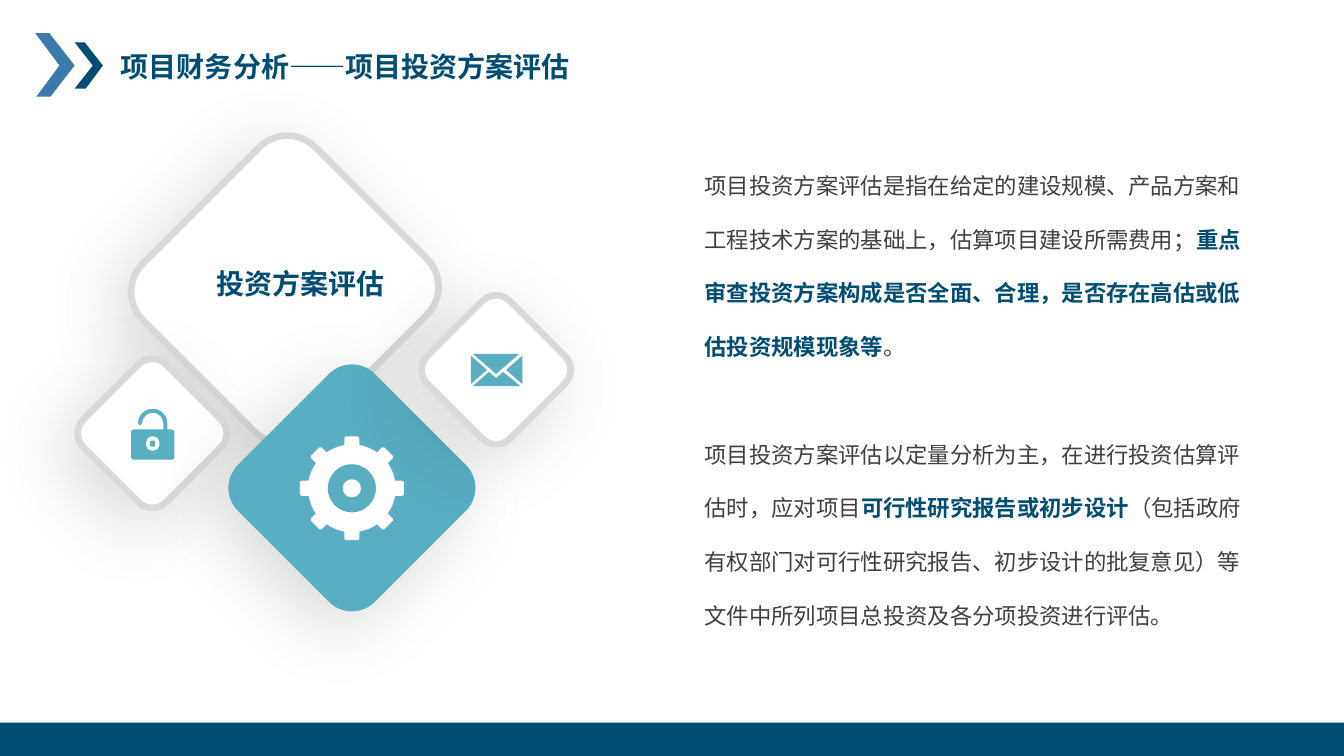
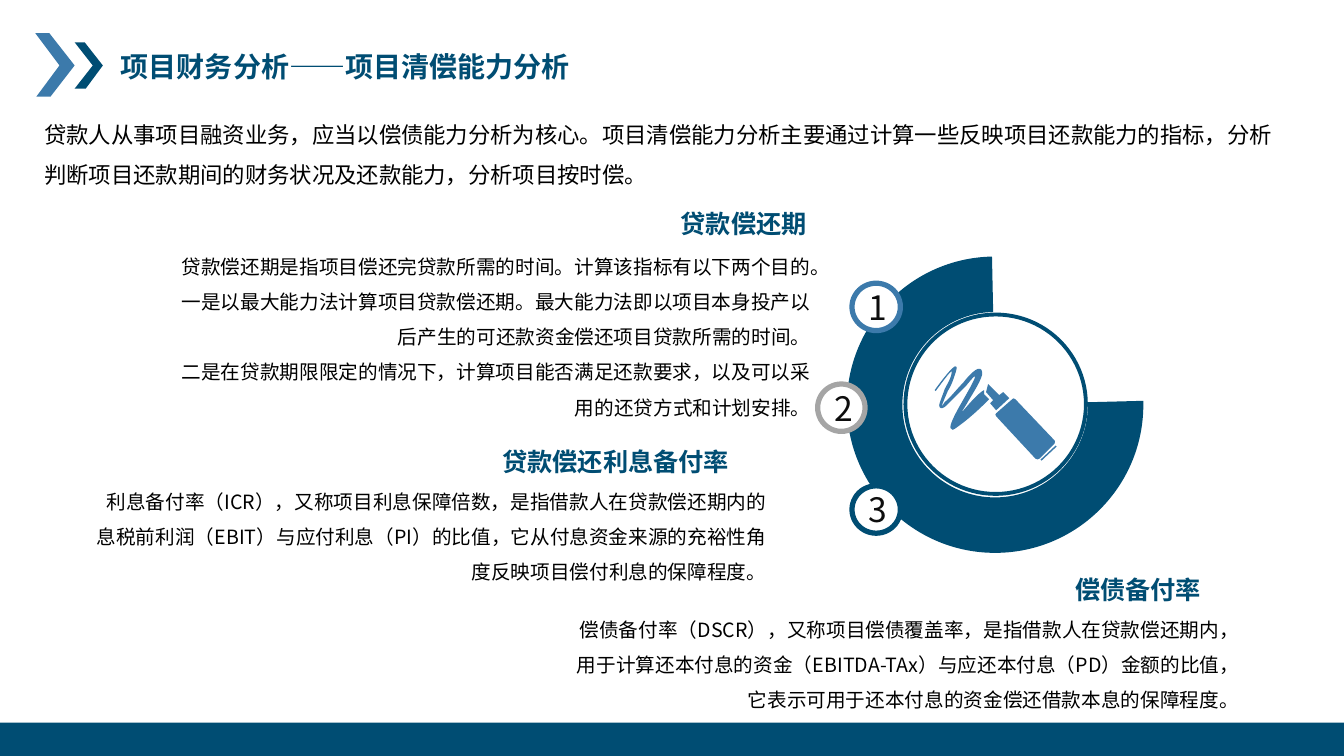
"""Build two slides on project financial analysis."""
import math

from lxml import etree
from pptx import Presentation
from pptx import util as u
from pptx.dml.color import RGBColor
from pptx.enum import shapes, text
from pptx.oxml.ns import qn

PX = 9144
FONT = "Noto Sans CJK SC"
NAVY, BLUE, TEAL = "004D73", "3C7AAB", "59AEC1"
WHITE, BLACK, INK, BODY = "FFFFFF", "000000", "0D0D0D", "404040"
BORDER, GREY = "D9D9D9", "A5A5A5"
LEFT, CENTER, RIGHT = text.PP_ALIGN.LEFT, text.PP_ALIGN.CENTER, text.PP_ALIGN.RIGHT

CHEVRONS = [
    ([(35, 33), (49, 33), (74, 65), (50, 96), (36, 96), (59, 65)], BLUE),
    ([(74, 42), (84, 42), (102, 65), (85, 88), (74, 88), (92, 65)], NAVY),
]
BAND = (0, 717, 1333, 33)
TITLE_BOX = (110, 44, 579, 44)

PLAN_TITLE = "项目财务分析——项目投资方案评估"
PLAN_BOX = (689, 139, 563, 487)
PLAN_TEXT = [
    [("项目投资方案评估是指在给定的建设规模、产品方案和工程技术方案的基础上，估算项目建设所需费用；", False),
     ("重点审查投资方案构成是否全面、合理，是否存在高估或低估投资规模现象等", True),
     ("。", False)],
    [("项目投资方案评估以定量分析为主，在进行投资估算评估时，应对项目", False),
     ("可行性研究报告或初步设计", True),
     ("（包括政府有权部门对可行性研究报告、初步设计的批复意见）等文件中所列项目总投资及各分项投资进行评估。", False)],
]
DIAMONDS = [
    ((165, 166, 235, 242), WHITE, BORDER),
    ((93, 372, 116, 116), WHITE, BORDER),
    ((253, 388, 192, 192), TEAL, None),
    ((434, 309, 116, 116), WHITE, BORDER),
]
DIAMOND_LABEL = ("投资方案评估", (187, 259, 223, 44))
ENVELOPE = [
    [(485, 369), (492, 375), (499, 369), (516, 383), (469, 383)],
    [(518, 353), (518, 381), (502, 367)],
    [(467, 353), (483, 367), (467, 381)],
    [(469, 351), (515, 351), (492, 371)],
]

DEBT_TITLE = "项目财务分析——项目清偿能力分析"
DEBT_INTRO = ("贷款人从事项目融资业务，应当以偿债能力分析为核心。项目清偿能力分析主要通过计算一些反映项目还款能力的指标，"
              "分析判断项目还款期间的财务状况及还款能力，分析项目按时偿。")
INTRO_BOX = (34, 102, 1255, 86)
INDICATORS = [
    ("贷款偿还期", (418, 202, 392, 38), (164, 236, 650, 190), [
        "贷款偿还期是指项目偿还完贷款所需的时间。计算该指标有以下两个目的。",
        "一是以最大能力法计算项目贷款偿还期。最大能力法即以项目本身投产以后产生的可还款资金偿还项目贷款所需的时间。",
        "二是在贷款期限限定的情况下，计算项目能否满足还款要求，以及可以采用的还贷方式和计划安排。"]),
    ("贷款偿还利息备付率", (341, 438, 392, 38), (82, 469, 688, 116), [
        "利息备付率（ICR），又称项目利息保障倍数，是指借款人在贷款偿还期内的息税前利润（EBIT）与应付利息（PI）的比值，"
        "它从付息资金来源的充裕性角度反映项目偿付利息的保障程度。"]),
    ("偿债备付率", (809, 565, 392, 38), (551, 596, 688, 116), [
        "偿债备付率（DSCR），又称项目偿债覆盖率，是指借款人在贷款偿还期内，用于计算还本付息的资金（EBITDA-TAx）"
        "与应还本付息（PD）金额的比值，它表示可用于还本付息的资金偿还借款本息的保障程度。"]),
]
BADGES = [((845, 281, 48, 47), BLUE), ((811, 381, 47, 47), GREY), ((845, 482, 48, 47), NAVY)]
HUB = (898, 312, 179, 178)
SCRIBBLE = [
    (927, 387), (927, 387, 954, 349, 948, 369), (946, 375, 944, 382, 940, 388),
    (937, 395, 934, 402, 934, 403), (934, 403, 935, 402, 937, 399),
    (943, 394, 949, 386, 955, 380), (969, 362, 975, 363, 974, 372),
    (972, 380, 963, 393, 958, 402), (945, 422, 966, 392, 976, 387),
    (976, 391), (981, 396), (981, 396, 966, 412, 949, 424),
    (945, 427, 944, 427, 943, 425), (941, 423, 947, 411, 954, 399),
    (962, 385, 977, 359, 958, 383), (952, 389, 945, 396, 939, 402),
    (936, 405, 933, 406, 932, 404), (930, 403, 934, 395, 937, 386),
    (940, 380, 944, 374, 944, 369), (946, 363, 928, 388, 928, 388),
]
MARKER = [
    [(988, 410), (1004, 396), (1004, 396, 1006, 394, 1007, 396), (1046, 437), (1046, 437, 1047, 438, 1046, 440),
     (1031, 455), (1030, 456, 1028, 456, 1027, 455), (988, 413), (987, 412, 987, 410, 988, 410)],
    [(980, 381), (978, 389), (985, 397), (982, 400), (988, 407), (1001, 395), (995, 389), (991, 392)],
    [(1032, 456), (1033, 457), (1048, 443), (1047, 442)],
]


def rgb(value):
    return RGBColor.from_string(value)


def px(*values):
    return [round(v * PX) for v in values]


def arc(cx, cy, radius, start, end):
    """Return a start point and cubic curves of at most a quarter turn each."""
    count = math.ceil(abs(end - start) / 90)
    step = math.radians((end - start) / count)
    pull = 4 / 3 * math.tan(step / 4)
    steps = [(cx + radius * math.cos(math.radians(start)), cy + radius * math.sin(math.radians(start)))]
    for i in range(count):
        a = math.radians(start) + i * step
        b = a + step
        units = [(math.cos(a) - pull * math.sin(a), math.sin(a) + pull * math.cos(a)),
                 (math.cos(b) + pull * math.sin(b), math.sin(b) - pull * math.cos(b)),
                 (math.cos(b), math.sin(b))]
        steps.append(tuple(v for x, y in units for v in (cx + radius * x, cy + radius * y)))
    return steps


def rounded(left, top, right, bottom, radius):
    corners = [(right - radius, bottom - radius, 0), (left + radius, bottom - radius, 90),
               (left + radius, top + radius, 180), (right - radius, top + radius, 270)]
    return [step for x, y, a in corners for step in arc(x, y, radius, a, a + 90)]


def gear(cx, cy):
    tooth = [(43, -7.5), (50, -7.5), (51.5, -6), (51.5, 6), (50, 7.5), (43, 7.5)]
    steps = []
    for angle in range(0, 360, 45):
        cos, sin = math.cos(math.radians(angle)), math.sin(math.radians(angle))
        steps += [(cx + x * cos - y * sin, cy + x * sin + y * cos) for x, y in tooth]
        steps += arc(cx, cy, 43.5, angle + 10, angle + 35)[1:]
    return [steps, arc(cx, cy, 24, 0, 360), arc(cx, cy, 9, 0, 360)]


def padlock():
    shackle = [(162, 426), *arc(151.5, 420, 10.5, 0, -180), (139, 422), *arc(151.5, 420, 14.5, 180, 360)]
    body = [(166, 426), (171, 426), (173, 428), (173, 454), (171, 456), (132, 456), (130, 454), (130, 428), (132, 426)]
    return [shackle + body, rounded(145, 433, 158, 447, 5), rounded(149, 437, 154, 443, 1)]


def paint(sp, fill=None, line=None, width=0):
    if fill:
        sp.fill.solid()
        sp.fill.fore_color.rgb = rgb(fill)
    else:
        sp.fill.background()
    if line:
        sp.line.color.rgb = rgb(line)
        sp.line.width = u.Pt(width)
    else:
        sp.line.fill.background()
    sp.shadow.inherit = False
    return sp


def outline(s, contours, fill):
    """Draw contours whose steps are points or six-number cubic curves."""
    fb = None
    for contour in contours:
        points = [px(*pt) for step in contour for pt in zip(step[::2], step[1::2])]
        if fb is None:
            fb = s.shapes.build_freeform(*points[0], scale=1.0)
        else:
            fb.move_to(*points[0])
        fb.add_line_segments(points[1:], close=True)
    sp = paint(fb.convert_to_shape(), fill)
    segments = iter(list(sp._element.iter(qn("a:lnTo"))))
    for step in (step for contour in contours for step in contour[1:]):
        first, *others = [next(segments) for _ in step[::2]]
        if others:
            first.tag = qn("a:cubicBezTo")
        for node in others:
            first.append(node[0])
            node.getparent().remove(node)
    return sp


def preset(s, kind, box, *style):
    return paint(s.shapes.add_shape(kind, *px(*box)), *style)


def soft_shadow(sp):
    effects = sp._element.spPr.find(qn("a:effectLst"))
    shadow = etree.SubElement(effects, qn("a:outerShdw"), blurRad=str(u.Pt(55)), dist=str(u.Pt(15)),
                              dir=str(135 * 60000), algn="ctr", rotWithShape="0")
    color = etree.SubElement(shadow, qn("a:srgbClr"), val=BLACK)
    etree.SubElement(color, qn("a:alpha"), val="15000")


def style_run(r, size, color, bold):
    r.font.size, r.font.bold, r.font.name = u.Pt(size), bold, FONT
    r.font.color.rgb = rgb(color)
    etree.SubElement(r._r.get_or_add_rPr(), qn("a:ea"), typeface=FONT)


def write(sp, paragraphs, size, color, bold=False, align=LEFT, spacing=1, gap=0):
    tf = sp.text_frame
    tf.word_wrap = True
    for i, content in enumerate(paragraphs):
        p = tf.add_paragraph() if i else tf.paragraphs[0]
        p.alignment = align
        p.line_spacing = u.Pt(size * 1.2 * spacing)
        p.space_before = u.Pt(gap if i else 0)
        for words, strong in [(content, False)] if isinstance(content, str) else content:
            r = p.add_run()
            r.text = words
            style_run(r, size, NAVY if strong else color, bold or strong)


def label(s, box, paragraphs, *args, **kwargs):
    write(s.shapes.add_textbox(*px(*box)), paragraphs, *args, **kwargs)


def new_slide(prs, title):
    s = prs.slides.add_slide(prs.slide_layouts[6])
    for points, fill in CHEVRONS:
        outline(s, [points], fill)
    preset(s, shapes.MSO_SHAPE.RECTANGLE, BAND, NAVY)
    label(s, TITLE_BOX, [title], 20, NAVY, True)
    return s


def plan_slide(prs):
    s = new_slide(prs, PLAN_TITLE)
    label(s, PLAN_BOX, PLAN_TEXT, 16, BODY, spacing=2, gap=38.4)
    for box, fill, line in DIAMONDS:
        sp = preset(s, shapes.MSO_SHAPE.ROUNDED_RECTANGLE, box, fill, line, 4.75)
        sp.rotation = 45
        soft_shadow(sp)
    for contours, fill in ((padlock(), TEAL), (ENVELOPE, TEAL), (gear(349, 484.5), WHITE)):
        outline(s, contours, fill)
    words, box = DIAMOND_LABEL
    label(s, box, [words], 20, NAVY, True, CENTER)


def debt_slide(prs):
    s = new_slide(prs, DEBT_TITLE)
    ring = arc(987, 401.5, 147, -1.5, 268.8) [:0] + arc(987, 401.5, 147, -1.5, 0) + arc(987, 401.5, 147, 0, 268.8)[1:]
    ring += arc(987, 401.5, 92, 268.8, -1.5)
    outline(s, [ring], NAVY)
    preset(s, shapes.MSO_SHAPE.OVAL, HUB, None, NAVY, 2.75)
    outline(s, [SCRIBBLE, *MARKER], BLUE)
    for number, (box, line) in enumerate(BADGES, 1):
        sp = preset(s, shapes.MSO_SHAPE.OVAL, box, WHITE, line, 3.75)
        sp.text_frame.vertical_anchor = text.MSO_ANCHOR.MIDDLE
        write(sp, [str(number)], 24, INK, align=CENTER)
    label(s, INTRO_BOX, [DEBT_INTRO], 16, BLACK, spacing=1.5)
    for heading, heading_box, body_box, body in INDICATORS:
        label(s, body_box, body, 14, BLACK, align=RIGHT, spacing=1.5)
        label(s, heading_box, [heading], 18, NAVY, True, RIGHT)


def main():
    prs = Presentation()
    prs.slide_width, prs.slide_height = px(1333, 750)
    plan_slide(prs)
    debt_slide(prs)
    prs.save("out.pptx")


if __name__ == "__main__":
    main()
